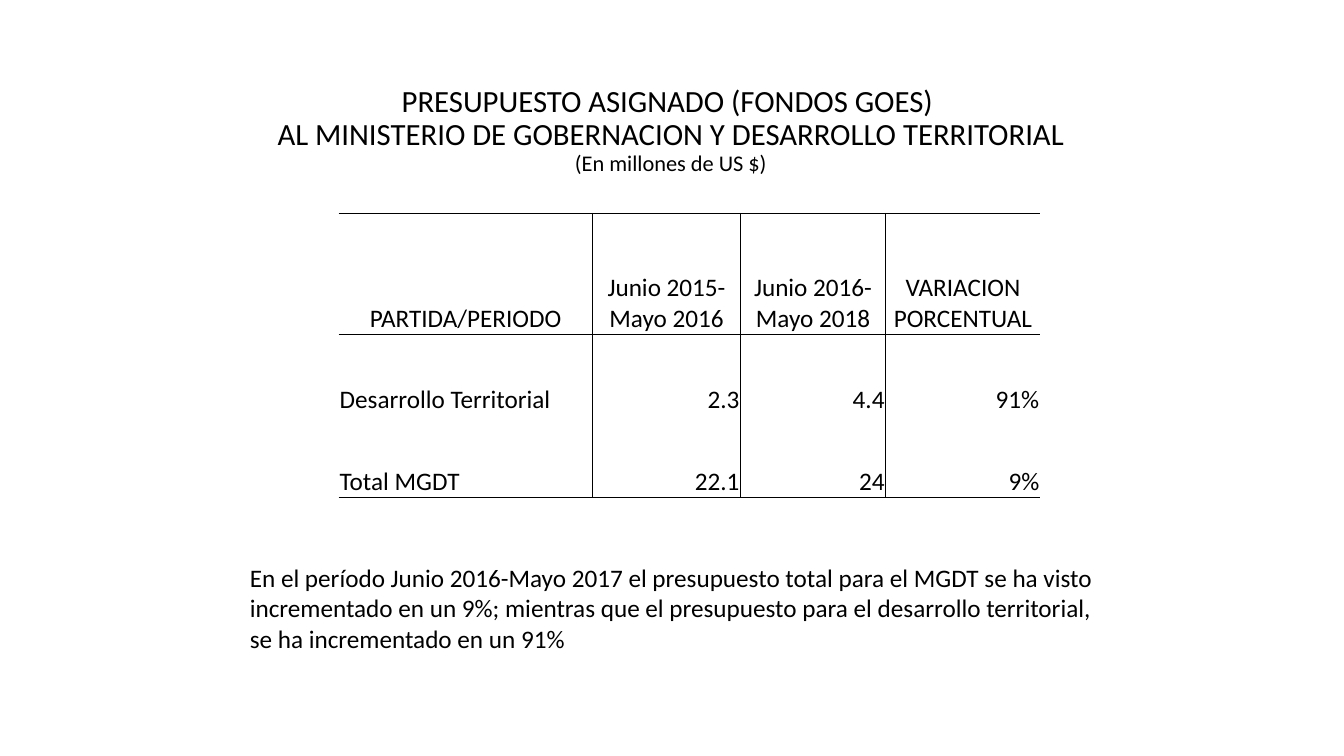
from dataclasses import dataclass

import lxml.etree
import pptx
import pptx.dml.color
import pptx.enum.text
import pptx.oxml.ns
import pptx.util

Pt = pptx.util.Pt
Align = pptx.enum.text.PP_ALIGN
Anchor = pptx.enum.text.MSO_ANCHOR
AutoSize = pptx.enum.text.MSO_AUTO_SIZE


@dataclass(frozen=True)
class Theme:
    font: str = "Calibri"
    ink: str = "000000"
    heading: float = 22
    unit: float = 16
    body: float = 18
    rule: float = 0.5


@dataclass(frozen=True)
class Box:
    left: float
    top: float
    width: float
    height: float

    def lengths(self) -> tuple:
        return Pt(self.left), Pt(self.top), Pt(self.width), Pt(self.height)


@dataclass(frozen=True)
class Line:
    text: str
    size: float


@dataclass(frozen=True)
class BudgetRow:
    values: tuple
    alignments: tuple
    height: float


THEME = Theme()
HEADING_BOX = Box(174.24, 39.6, 609.84, 90)
BUDGET_BOX = Box(241.9, 152.2, 501.2, 203)
SUMMARY_BOX = Box(171.36, 398.16, 627.84, 94.32)
COLUMN_WIDTHS = (181.44, 105.6, 103.68, 110.5)
HEADING = (
    Line("PRESUPUESTO ASIGNADO (FONDOS GOES) ", THEME.heading),
    Line("AL MINISTERIO DE GOBERNACION Y DESARROLLO TERRITORIAL", THEME.heading),
    Line("(En millones de US $)", THEME.unit),
)
SUMMARY = (
    Line(
        "En el período Junio 2016-Mayo 2017 el presupuesto total para el MGDT "
        "se ha visto incrementado en un 9%; mientras que el presupuesto para el "
        "desarrollo territorial, se ha incrementado en un 91%",
        THEME.body,
    ),
)
HEADER_ALIGN = (Align.CENTER,) * 4
FIGURES_ALIGN = (Align.LEFT,) + (Align.RIGHT,) * 3
BUDGET = (
    BudgetRow(
        ("PARTIDA/PERIODO", "Junio 2015- Mayo 2016", "Junio 2016- Mayo 2018", "VARIACION PORCENTUAL"),
        HEADER_ALIGN,
        86.4,
    ),
    BudgetRow(("Desarrollo Territorial", "2.3", "4.4", "91%"), FIGURES_ALIGN, 58.3),
    BudgetRow(("Total MGDT", "22.1", "24", "9%"), FIGURES_ALIGN, 58.3),
)


def write_lines(paragraph, lines: tuple, alignment) -> None:
    paragraph.alignment = alignment
    for index, line in enumerate(lines):
        if index:
            paragraph.add_line_break()
        run = paragraph.add_run()
        run.text = line.text
        run.font.name = THEME.font
        run.font.size = Pt(line.size)
        run.font.color.rgb = pptx.dml.color.RGBColor.from_string(THEME.ink)


def add_text(slide, box: Box, lines: tuple, alignment, anchor):
    frame = slide.shapes.add_textbox(*box.lengths()).text_frame
    frame.word_wrap = True
    frame.vertical_anchor = anchor
    write_lines(frame.paragraphs[0], lines, alignment)
    return frame


def set_borders(cell, edges: dict) -> None:
    qn = pptx.oxml.ns.qn
    properties = cell._tc.get_or_add_tcPr()
    for position, (side, ruled) in enumerate(edges.items()):
        border = lxml.etree.Element(qn(f"a:ln{side}"), w=str(Pt(THEME.rule)))
        if ruled:
            fill = lxml.etree.SubElement(border, qn("a:solidFill"))
            lxml.etree.SubElement(fill, qn("a:srgbClr"), val=THEME.ink)
        else:
            lxml.etree.SubElement(border, qn("a:noFill"))
        properties.insert(position, border)


def add_budget(slide) -> None:
    last_row, last_column = len(BUDGET) - 1, len(COLUMN_WIDTHS) - 1
    table = slide.shapes.add_table(len(BUDGET), len(COLUMN_WIDTHS), *BUDGET_BOX.lengths()).table
    table.first_row = table.horz_banding = False
    for column, width in zip(table.columns, COLUMN_WIDTHS):
        column.width = Pt(width)
    for row_index, row in enumerate(BUDGET):
        table.rows[row_index].height = Pt(row.height)
        for column_index, (value, alignment) in enumerate(zip(row.values, row.alignments)):
            cell = table.cell(row_index, column_index)
            cell.fill.background()
            cell.vertical_anchor = Anchor.BOTTOM
            cell.margin_left = cell.margin_right = cell.margin_top = Pt(0.75)
            cell.margin_bottom = Pt(0)
            write_lines(cell.text_frame.paragraphs[0], (Line(value, THEME.body),), alignment)
            set_borders(
                cell,
                {
                    "L": column_index > 0,
                    "R": column_index < last_column,
                    "T": row_index <= 1,
                    "B": row_index in (0, last_row),
                },
            )


def main() -> None:
    presentation = pptx.Presentation()
    presentation.slide_width, presentation.slide_height = Pt(960), Pt(540)
    slide = presentation.slides.add_slide(presentation.slide_layouts[6])
    heading = add_text(slide, HEADING_BOX, HEADING, Align.CENTER, Anchor.BOTTOM)
    heading.paragraphs[0].line_spacing = 0.9
    summary = add_text(slide, SUMMARY_BOX, SUMMARY, Align.LEFT, Anchor.TOP)
    summary.auto_size = AutoSize.SHAPE_TO_FIT_TEXT
    add_budget(slide)
    presentation.save("out.pptx")


if __name__ == "__main__":
    main()
